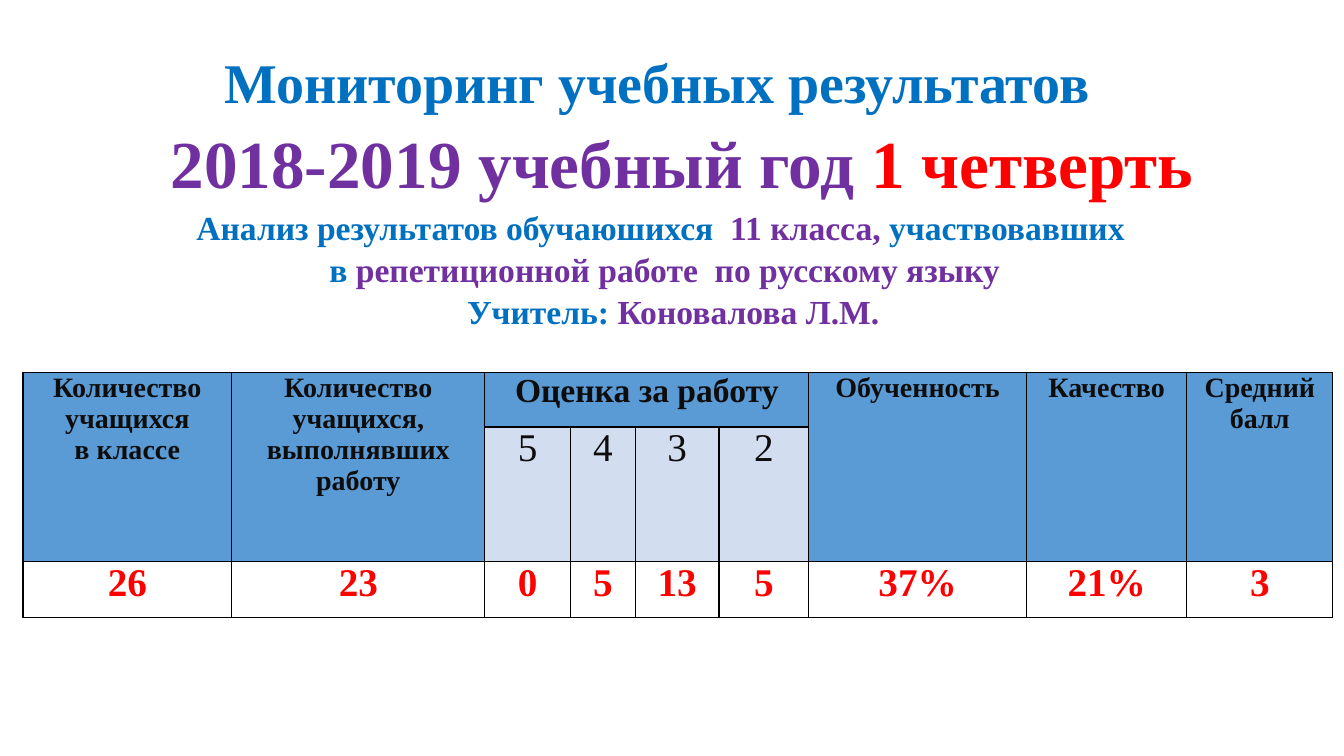
from lxml import etree
from pptx import Presentation
from pptx.dml.color import RGBColor
from pptx.enum.text import MSO_ANCHOR, MSO_AUTO_SIZE, PP_ALIGN
from pptx.oxml.ns import qn
from pptx.util import Cm, Pt

BLUE = RGBColor(0x00, 0x70, 0xC0)
PURPLE = RGBColor(0x70, 0x30, 0xA0)
RED = RGBColor(0xFF, 0x00, 0x00)
INK = RGBColor(0x0D, 0x0D, 0x0D)
BLACK = RGBColor(0x00, 0x00, 0x00)
WHITE = RGBColor(0xFF, 0xFF, 0xFF)
HEADER_FILL = RGBColor(0x5B, 0x9B, 0xD5)
GRADE_FILL = RGBColor(0xD2, 0xDE, 0xEF)

CENTER = PP_ALIGN.CENTER
TOP = MSO_ANCHOR.TOP
NO_AUTOFIT = MSO_AUTO_SIZE.NONE
FONT = "Times New Roman"

# Each line: left indent in cm, then runs of (text, size, colour)
TITLE_LINES = [
    (0, [("Мониторинг учебных результатов", 40, BLUE), (" ", 48, BLUE)]),
    (0.85, [("2018-2019 учебный год ", 48, PURPLE), ("1 четверть", 48, RED)]),
]
SUBTITLE_LINES = [
    (0, [("Анализ результатов обучаюшихся  ", 24, BLUE),
         ("11 класса, ", 24, PURPLE), ("участвовавших ", 24, BLUE)]),
    (0, [("в ", 24, BLUE),
         ("репетиционной работе  по русскому языку", 24, PURPLE)]),
    (0.43, [("Учитель: ", 24, BLUE), ("Коновалова Л.М.", 24, PURPLE)]),
]

COLUMN_WIDTHS = [5.26, 6.38, 2.16, 1.63, 2.11, 2.26, 5.49, 4.04, 3.68]
ROW_HEIGHTS = [1.37, 3.38, 1.42]
GRADE_COLUMNS = range(2, 6)
HEADERS = {
    0: "Количество учащихся\nв классе",
    1: "Количество учащихся, выполнявших работу",
    6: "Обученность",
    7: "Качество",
    8: "Средний балл",
}
GRADES = ["5", "4", "3", "2"]
RESULTS = ["26", "23", "0", "5", "13", "5", "37%", "21%", "3"]


def style_run(r, size, color, bold=True):
    r.font.name = FONT
    r.font.size = Pt(size)
    r.font.bold = bold
    r.font.color.rgb = color


def fill_placeholder(sp, left, top, width, height, lines, spacing):
    sp.left, sp.top, sp.width, sp.height = Cm(left), Cm(top), Cm(width), Cm(height)
    tf = sp.text_frame
    tf.word_wrap = True
    tf.auto_size = NO_AUTOFIT
    tf.vertical_anchor = TOP
    tf.text = "\n".join([""] * len(lines))
    for p, (indent, runs) in zip(tf.paragraphs, lines):
        p.alignment = CENTER
        p.line_spacing = spacing
        p.space_before = p.space_after = Pt(0)
        pPr = p._p.get_or_add_pPr()
        pPr.set("marL", str(Cm(indent)))
        pPr.set("indent", "0")
        for text, size, color in runs:
            r = p.add_run()
            r.text = text
            style_run(r, size, color)


def add_borders(cell):
    tcPr = cell._tc.get_or_add_tcPr()
    for side in ("a:lnL", "a:lnR", "a:lnT", "a:lnB"):
        ln = etree.SubElement(tcPr, qn(side), w=str(Pt(1)))
        fill = etree.SubElement(ln, qn("a:solidFill"))
        etree.SubElement(fill, qn("a:srgbClr"), val=str(BLACK))


def format_cell(cell, fill):
    add_borders(cell)
    cell.fill.solid()
    cell.fill.fore_color.rgb = fill
    cell.margin_left = cell.margin_right = Cm(0.18)
    cell.margin_top = cell.margin_bottom = 0


def write_cell(cell, text, size, color=INK, bold=True):
    cell.text_frame.text = text
    for p in cell.text_frame.paragraphs:
        p.alignment = CENTER
        for r in p.runs:
            style_run(r, size, color, bold)


def add_results_table(s):
    frame = s.shapes.add_table(
        len(ROW_HEIGHTS), len(COLUMN_WIDTHS), Cm(0.58), Cm(9.39),
        Cm(sum(COLUMN_WIDTHS)), Cm(sum(ROW_HEIGHTS)))
    table = frame.table
    for column, width in zip(table.columns, COLUMN_WIDTHS):
        column.width = Cm(width)
    for row, height in zip(table.rows, ROW_HEIGHTS):
        row.height = Cm(height)

    for col, result in enumerate(RESULTS):
        grade_fill = GRADE_FILL if col in GRADE_COLUMNS else HEADER_FILL
        for row, fill in enumerate((HEADER_FILL, grade_fill, WHITE)):
            format_cell(table.cell(row, col), fill)
        write_cell(table.cell(2, col), result, 28, RED)

    for col, header in HEADERS.items():
        table.cell(0, col).merge(table.cell(1, col))
        write_cell(table.cell(0, col), header, 20)
    first, last = GRADE_COLUMNS[0], GRADE_COLUMNS[-1]
    table.cell(0, first).merge(table.cell(0, last))
    write_cell(table.cell(0, first), "Оценка за работу", 24)
    for col, grade in zip(GRADE_COLUMNS, GRADES):
        write_cell(table.cell(1, col), grade, 28, bold=False)


def main():
    prs = Presentation()
    prs.slide_width, prs.slide_height = Cm(33.87), Cm(19.05)
    s = prs.slides.add_slide(prs.slide_layouts[0])
    fill_placeholder(s.shapes.title, 2.26, 0.66, 29.01, 4.37, TITLE_LINES, 1.06)
    fill_placeholder(s.placeholders[1], 1.93, 5.03, 29.64, 3.33, SUBTITLE_LINES, 1.05)
    add_results_table(s)
    prs.save("out.pptx")


if __name__ == "__main__":
    main()
